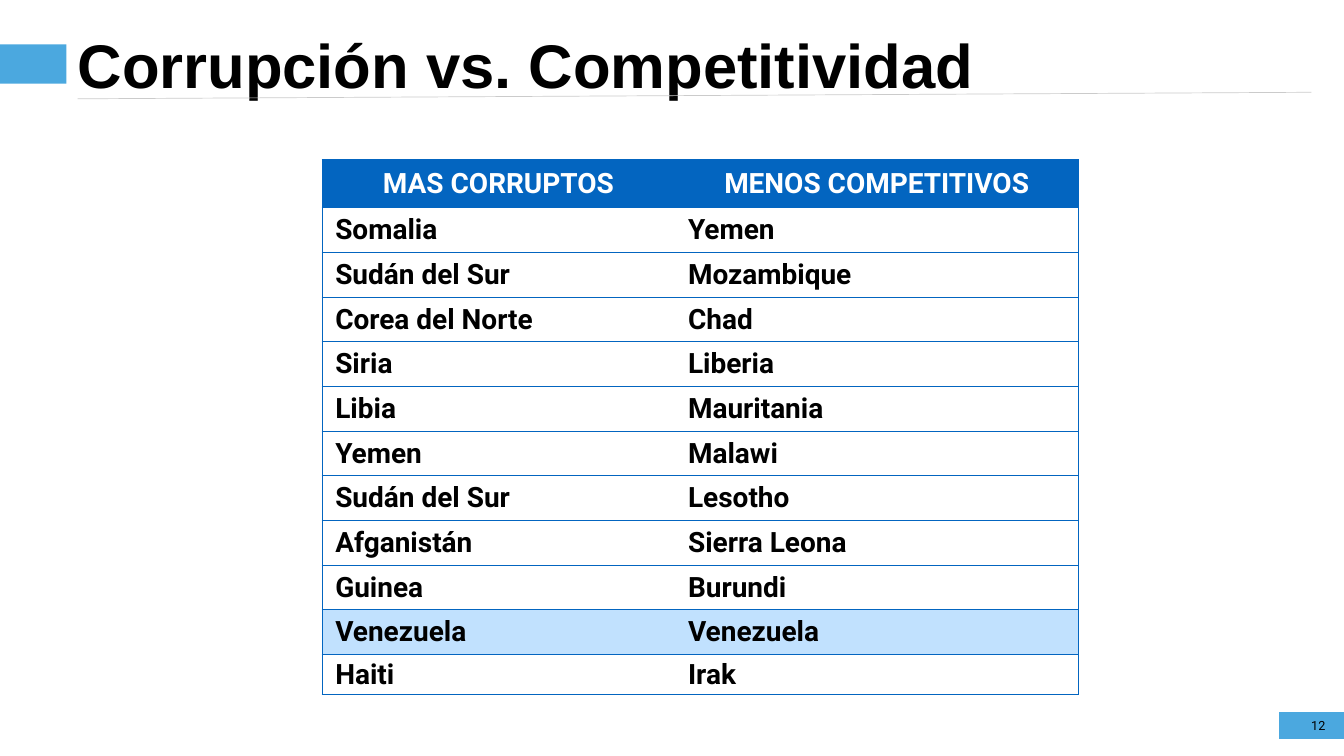
from typing import NamedTuple

from lxml import etree
from pptx import Presentation
from pptx.dml.color import RGBColor
from pptx.enum.shapes import MSO_CONNECTOR, MSO_SHAPE
from pptx.enum.text import MSO_ANCHOR, MSO_AUTO_SIZE, PP_ALIGN
from pptx.oxml.ns import qn
from pptx.util import Cm, Pt

LEFT, CENTER, RIGHT = PP_ALIGN.LEFT, PP_ALIGN.CENTER, PP_ALIGN.RIGHT
MIDDLE = MSO_ANCHOR.MIDDLE
FIT_SHAPE = MSO_AUTO_SIZE.SHAPE_TO_FIT_TEXT
RECTANGLE = MSO_SHAPE.RECTANGLE
STRAIGHT = MSO_CONNECTOR.STRAIGHT

BLACK, WHITE = "000000", "FFFFFF"
ACCENT, RULE = "4BA8DF", "CBCBCB"
TABLE_BLUE, HIGHLIGHT = "0365C0", "C1E1FE"


class Box(NamedTuple):
    """Position and size in centimetres."""
    left: float
    top: float
    width: float
    height: float

    def lengths(self) -> list:
        return [Cm(value) for value in self]


class TextStyle(NamedTuple):
    size: float
    font: str
    color: str
    bold: bool
    alignment: PP_ALIGN


class Ranking(NamedTuple):
    corrupt: str
    uncompetitive: str


TITLE = TextStyle(88, "Arial", BLACK, True, LEFT)
NUMBER = TextStyle(18, "Roboto", BLACK, False, RIGHT)
HEADER = TextStyle(40, "Roboto", WHITE, True, CENTER)
BODY = TextStyle(40, "Roboto", BLACK, True, LEFT)

ACCENT_BARS = [Box(0, 2.24, 3.35, 1.98), Box(64.47, 35.89, 3.35, 1.35)]
COLUMN_WIDTHS = [17.78, 20.35]
HEADER_HEIGHT, BODY_HEIGHT, LAST_HEIGHT = 2.44, 2.25, 2.03
HIGHLIGHTED = "Venezuela"

HEADINGS = Ranking("MAS CORRUPTOS", "MENOS COMPETITIVOS")
RANKINGS = [
    Ranking("Somalia", "Yemen"),
    Ranking("Sudán del Sur", "Mozambique"),
    Ranking("Corea del Norte", "Chad"),
    Ranking("Siria", "Liberia"),
    Ranking("Libia", "Mauritania"),
    Ranking("Yemen", "Malawi"),
    Ranking("Sudán del Sur", "Lesotho"),
    Ranking("Afganistán", "Sierra Leona"),
    Ranking("Guinea", "Burundi"),
    Ranking("Venezuela", "Venezuela"),
    Ranking("Haiti", "Irak"),
]


def rgb(color: str) -> RGBColor:
    return RGBColor.from_string(color)


def write(text_frame, text: str, style: TextStyle):
    paragraph = text_frame.paragraphs[0]
    paragraph.alignment = style.alignment
    run = paragraph.add_run()
    run.text = text
    run.font.size = Pt(style.size)
    run.font.name = style.font
    run.font.bold = style.bold
    run.font.color.rgb = rgb(style.color)
    return paragraph


def write_in_shape(shape, box: Box, text: str, style: TextStyle) -> None:
    shape.left, shape.top, shape.width, shape.height = box.lengths()
    frame = shape.text_frame
    frame.margin_left = frame.margin_right = frame.margin_top = frame.margin_bottom = 0
    frame.word_wrap = True
    frame.auto_size = FIT_SHAPE
    frame.vertical_anchor = MIDDLE
    write(frame, text, style)


def add_bar(slide, box: Box) -> None:
    shape = slide.shapes.add_shape(RECTANGLE, *box.lengths())
    shape.shadow.inherit = False
    shape.fill.solid()
    shape.fill.fore_color.rgb = rgb(ACCENT)
    shape.line.fill.background()


def add_title_rule(slide) -> None:
    line = slide.shapes.add_connector(STRAIGHT, Cm(3.91), Cm(4.98), Cm(66.09), Cm(4.65))
    line.line.color.rgb = rgb(RULE)
    line.line.width = Pt(1)
    etree.SubElement(line._element.spPr, qn("a:effectLst"))


def set_borders(cell, visible_sides: str) -> None:
    """Draw the given sides (letters of LRTB) and hide the others."""
    properties = cell._tc.get_or_add_tcPr()
    for index, side in enumerate("LRTB"):
        border = etree.Element(qn(f"a:ln{side}"), w=str(Pt(1)))
        if side in visible_sides:
            fill = etree.SubElement(border, qn("a:solidFill"))
            etree.SubElement(fill, qn("a:srgbClr"), val=TABLE_BLUE)
        else:
            etree.SubElement(border, qn("a:noFill"))
        properties.insert(index, border)


def fill_cell(cell, text: str, style: TextStyle, color: str, sides: str) -> None:
    cell.margin_left = cell.margin_right = cell.margin_top = Cm(0.03)
    cell.margin_bottom = 0
    cell.vertical_anchor = MIDDLE
    cell.fill.solid()
    cell.fill.fore_color.rgb = rgb(color)
    set_borders(cell, sides)
    paragraph = write(cell.text_frame, text, style)
    if style is BODY:
        properties = paragraph._p.get_or_add_pPr()
        properties.set("marL", "0")
        properties.set("indent", str(Cm(0.64)))


def add_ranking_table(slide) -> None:
    rows = [HEADINGS, *RANKINGS]
    heights = [HEADER_HEIGHT] + [BODY_HEIGHT] * (len(RANKINGS) - 1) + [LAST_HEIGHT]
    box = Box(16.23, 8.03, sum(COLUMN_WIDTHS), sum(heights))
    table = slide.shapes.add_table(len(rows), len(COLUMN_WIDTHS), *box.lengths()).table
    table.first_row = table.horz_banding = False
    for column, width in zip(table.columns, COLUMN_WIDTHS):
        column.width = Cm(width)
    for row, height, ranking in zip(table.rows, heights, rows):
        row.height = Cm(height)
        if ranking is HEADINGS:
            style, color = HEADER, TABLE_BLUE
        else:
            style = BODY
            color = HIGHLIGHT if ranking.corrupt == HIGHLIGHTED else WHITE
        for cell, text, sides in zip(row.cells, ranking, ["LTB", "RTB"]):
            fill_cell(cell, text, style, color, sides)


def main() -> None:
    presentation = Presentation()
    presentation.slide_width, presentation.slide_height = Cm(67.74), Cm(38.1)
    slide = presentation.slides.add_slide(presentation.slide_layouts[5])
    write_in_shape(slide.shapes.title, Box(3.91, 1.35, 63.09, 3.76),
                   "Corrupción vs. Competitividad", TITLE)
    for bar in ACCENT_BARS:
        add_bar(slide, bar)
    add_title_rule(slide)
    number = slide.shapes.add_textbox(0, 0, 0, 0)
    write_in_shape(number, Box(65.8, 36.17, 1, 0.76), "12", NUMBER)
    add_ranking_table(slide)
    presentation.save("out.pptx")


if __name__ == "__main__":
    main()
